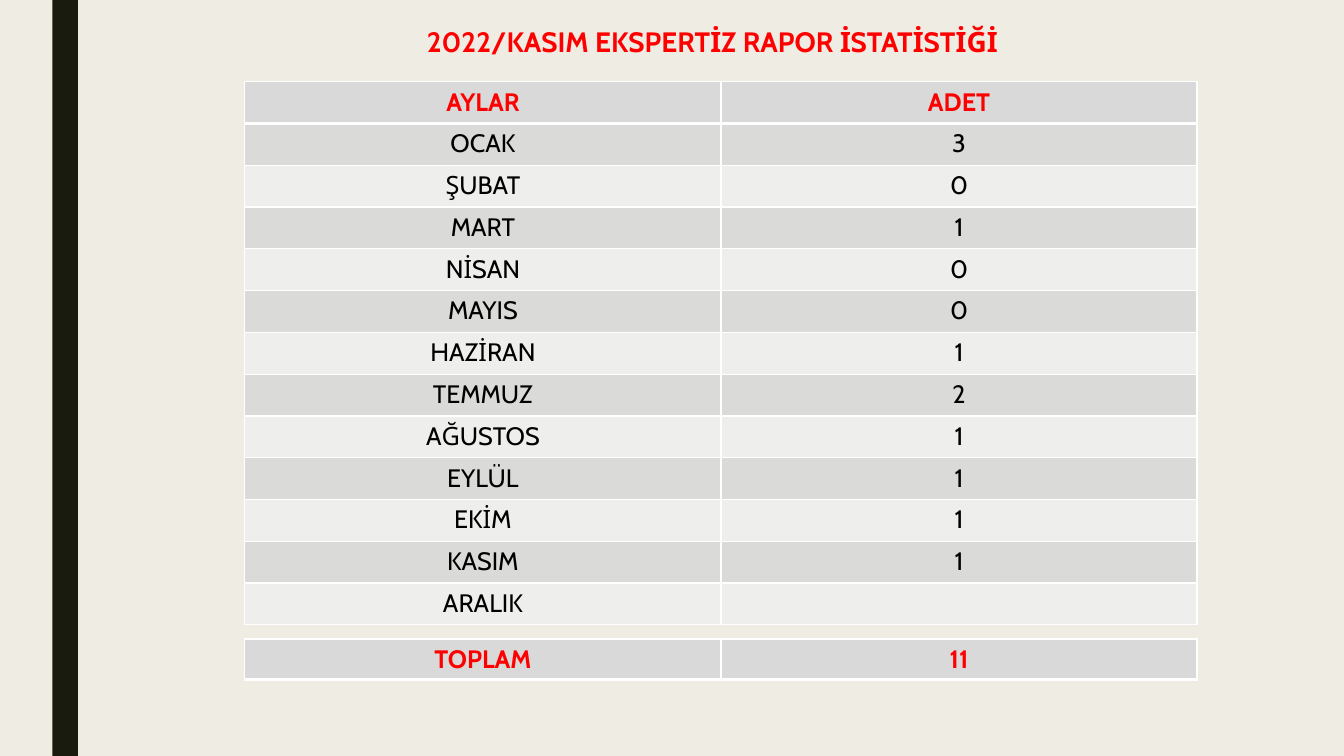
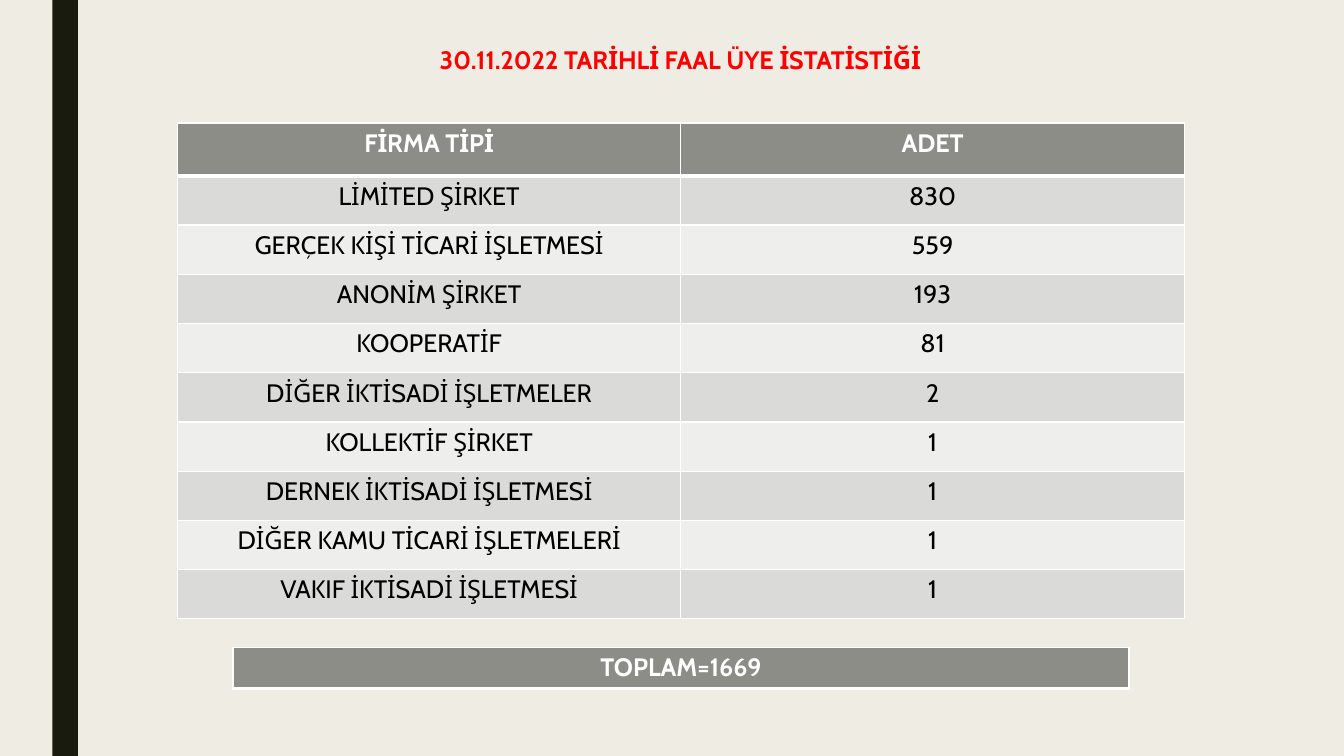
from lxml import etree
from pptx import Presentation
from pptx.dml.color import RGBColor
from pptx.enum.shapes import MSO_SHAPE
from pptx.enum.text import PP_ALIGN
from pptx.oxml.ns import qn
from pptx.util import Inches, Pt

RECT = MSO_SHAPE.RECTANGLE
MID = PP_ALIGN.CENTER
FONT = "Cabin"
HUES = {
    "page": "EFEDE3", "band": "191B0E", "red": "FF0000", "black": "000000",
    "white": "FFFFFF", "pale": "D9D9D9", "gray": "8C8D86",
    "odd": "DADBD9", "even": "EEEEED",
}

deck = Presentation()
deck.slide_width, deck.slide_height = Inches(13.33), Inches(7.5)
COL, ROW = deck.slide_width / 100, deck.slide_height / 100  # percent grid


def style(para, size, hue, bold):
    para.alignment = MID
    for run in para.runs:
        run.font.name, run.font.size, run.font.bold = FONT, Pt(size), bold
        run.font.color.rgb = RGBColor.from_string(HUES[hue])


def grid(slide, left, top, width, tall, rows, fill, ink):
    """Add a table with a head row; tall holds the head and body heights."""
    heights = [int(ROW * (tall[0] if r == 0 else tall[1])) for r in range(len(rows))]
    count = len(rows[0])
    table = slide.shapes.add_table(
        len(rows), count, int(COL * left), int(ROW * top),
        int(COL * width), sum(heights)).table
    table.horz_banding = False
    for r, row in enumerate(rows):
        table.rows[r].height = heights[r]
        head = r == 0
        hue = fill if head else "odd" if r % 2 else "even"
        # The line below the head row is thick
        edges = {"lnL": 1, "lnR": 1, "lnT": 3 if r == 1 else 1, "lnB": 3 if head else 1}
        for c, value in enumerate(row):
            cell = table.cell(r, c)
            para = cell.text_frame.paragraphs[0]
            para.text = value
            style(para, 18, ink if head else "black", head)
            props = cell._tc.get_or_add_tcPr()
            for tag, points in edges.items():
                line = etree.SubElement(props, qn("a:" + tag), w=str(Pt(points)))
                solid = etree.SubElement(line, qn("a:solidFill"))
                etree.SubElement(solid, qn("a:srgbClr"), val=HUES["white"])
            cell.fill.solid()
            cell.fill.fore_color.rgb = RGBColor.from_string(HUES[hue])


# Shared background
back = deck.slide_master.background.fill
back.solid()
back.fore_color.rgb = RGBColor.from_string(HUES["page"])

# Content: title, its box, size and line spacing, then the tables
months = [
    ("AYLAR", "ADET"), ("OCAK", "3"), ("ŞUBAT", "0"), ("MART", "1"),
    ("NİSAN", "0"), ("MAYIS", "0"), ("HAZİRAN", "1"), ("TEMMUZ", "2"),
    ("AĞUSTOS", "1"), ("EYLÜL", "1"), ("EKİM", "1"), ("KASIM", "1"),
    ("ARALIK", ""),
]
firms = [
    ("FİRMA TİPİ", "ADET"), ("LİMİTED ŞİRKET", "830"),
    ("GERÇEK KİŞİ TİCARİ İŞLETMESİ", "559"), ("ANONİM ŞİRKET", "193"),
    ("KOOPERATİF", "81"), ("DİĞER İKTİSADİ İŞLETMELER", "2"),
    ("KOLLEKTİF ŞİRKET", "1"), ("DERNEK İKTİSADİ İŞLETMESİ", "1"),
    ("DİĞER KAMU TİCARİ İŞLETMELERİ", "1"), ("VAKIF İKTİSADİ İŞLETMESİ", "1"),
]
pages = [
    ("2022/KASIM EKSPERTİZ RAPOR İSTATİSTİĞİ", (25.13, 3.07, 55.73, 5.87), 20, 0.89, [
        (18.22, 10.8, 70.85, (5.53, 5.53), months, "pale", "red"),
        (18.22, 84.53, 70.85, (5.33, 0), [("TOPLAM", "11")], "pale", "red"),
    ]),
    ("30.11.2022 TARİHLİ FAAL ÜYE İSTATİSTİĞİ", (11.25, 5.2, 78.75, 5.33), 18, 1.0, [
        (13.2, 16.27, 74.93, (7, 6.51), firms, "gray", "white"),
        (17.33, 85.6, 66.68, (5.47, 0), [("TOPLAM=1669",)], "gray", "white"),
    ]),
]

for title, (left, top, width, height), size, gap, tables in pages:
    slide = deck.slides.add_slide(deck.slide_layouts[6])

    # Side band
    band = slide.shapes.add_shape(
        RECT, int(COL * 3.9), 0, int(COL * 1.9), deck.slide_height)
    band.shadow.inherit = False
    band.fill.solid()
    band.fill.fore_color.rgb = RGBColor.from_string(HUES["band"])
    band.line.fill.background()

    # Title
    box = slide.shapes.add_textbox(
        int(COL * left), int(ROW * top), int(COL * width), int(ROW * height))
    box.text_frame.word_wrap = True
    para = box.text_frame.paragraphs[0]
    para.text = title
    para.line_spacing = gap
    style(para, size, "red", True)

    # Tables
    for table in tables:
        grid(slide, *table)

deck.save("out.pptx")
